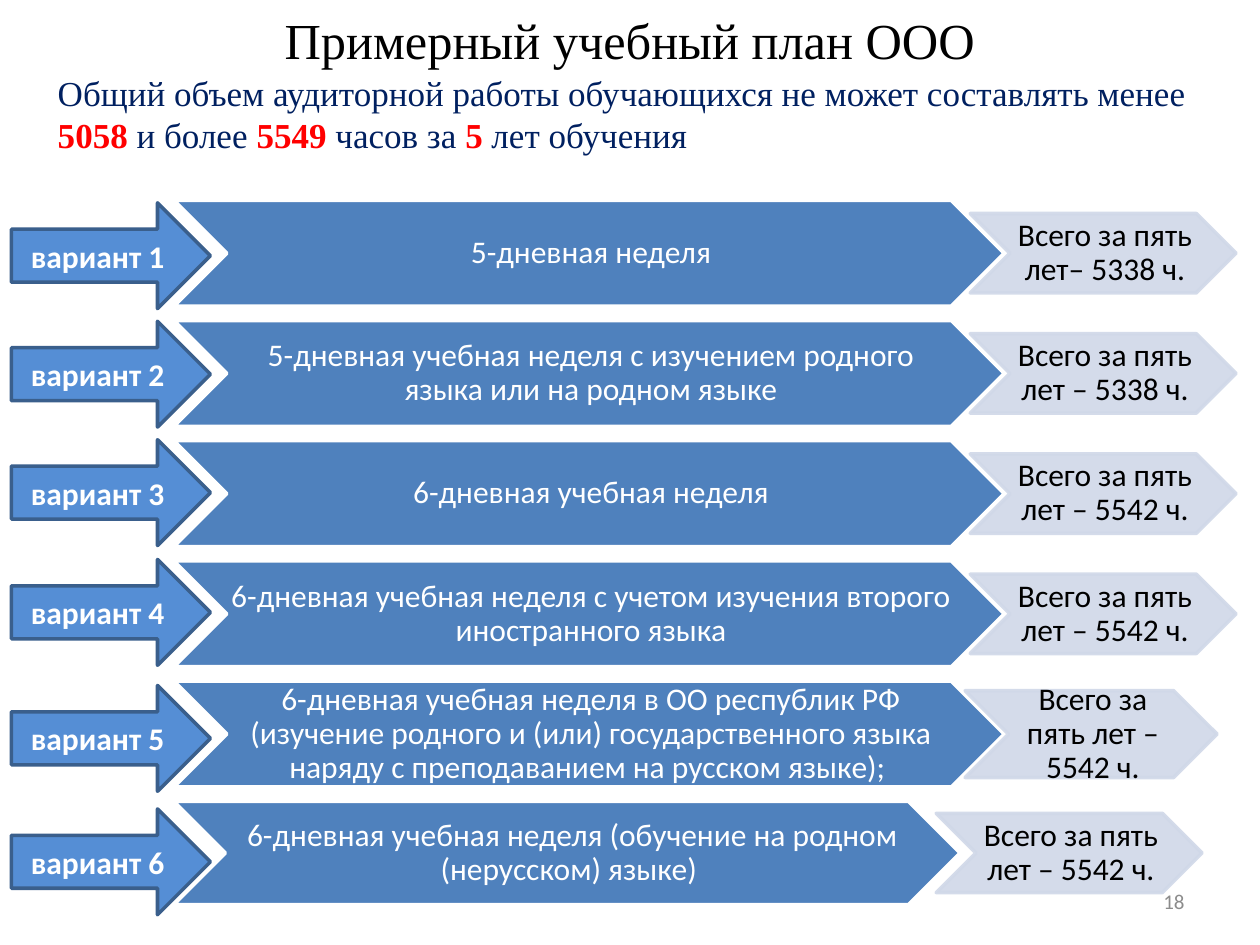
from lxml import etree
from pptx import Presentation
from pptx import util as u
from pptx.dml.color import RGBColor
from pptx.enum import shapes, text
from pptx.oxml.ns import qn

TITLE = "Примерный учебный план ООО"
SUMMARY = [
    ("Общий объем аудиторной работы обучающихся не может составлять менее ", "summary"),
    ("5058", "number"),
    (" и более ", "summary"),
    ("5549", "number"),
    (" часов за ", "summary"),
    ("5", "number"),
    (" лет обучения", "summary"),
]
PAGE_NUMBER = "18"
VARIANTS = [
    ("5-дневная неделя", "Всего за пять лет– 5338 ч."),
    ("5-дневная учебная неделя с изучением родного языка или на родном языке",
     "Всего за пять лет – 5338 ч."),
    ("6-дневная учебная неделя", "Всего за пять лет – 5542 ч."),
    ("6-дневная учебная неделя с учетом изучения второго иностранного языка",
     "Всего за пять лет – 5542 ч."),
    ("6-дневная учебная неделя в ОО республик РФ (изучение родного и (или) "
     "государственного языка наряду с преподаванием на русском языке); ",
     "Всего за пять лет – 5542 ч."),
    (" 6-дневная учебная неделя (обучение на родном (нерусском) языке)",
     "Всего за пять лет – 5542 ч."),
]

THEME = {
    "fonts": {
        "title": ({"name": "Times New Roman", "size": u.Pt(28.8)}, "000000"),
        "summary": ({"name": "Times New Roman", "size": u.Pt(20), "bold": False}, "002060"),
        "number": ({"name": "Times New Roman", "size": u.Pt(20), "bold": True}, "FF0000"),
        "label": ({"name": "Calibri", "size": u.Pt(18), "bold": True}, "FFFFFF"),
        "week": ({"name": "Calibri", "size": u.Pt(18)}, "FFFFFF"),
        "total": ({"name": "Calibri", "size": u.Pt(18)}, "000000"),
        "page": ({"name": "Calibri", "size": u.Pt(12)}, "8C8C8C"),
    },
    # fill, line, opacity in percent
    "shapes": {
        "label": ("558ED5", "3A5F8C", 100),
        "week": ("4F81BD", "FFFFFF", 100),
        "total": ("D0D8E8", "D0D8E8", 90),
    },
    "line_width": u.Pt(2),
}

# The slide is a grid of 100 columns by 75 rows
SLIDE_WIDTH, SLIDE_HEIGHT = u.Inches(10), u.Inches(7.5)
UNIT = SLIDE_WIDTH / 100
FIRST_ROW, ROW_PITCH = 15.9, 9.54
WEEK_LEFT, WEEK_SIZE = 13.8, (65.9, 8.4)
TOTAL_LEFT, TOTAL_SIZE = 77, (21.1, 6.3)
LABEL_LEFT, LABEL_SIZE = 0.9, (15.8, 8.4)
LABEL_TOPS = [16.1, 25.5, 34.9, 44.4, 54.4, 64.2]
# Rows whose chevrons differ from the common size
WEEK_SIZES = {5: (62.4, 8.2)}
TOTAL_PLACES = {4: (76.6, 20, 6.9), 5: (74.3, 21.1, 6.3)}

CENTER, LEFT, RIGHT = text.PP_ALIGN.CENTER, text.PP_ALIGN.LEFT, text.PP_ALIGN.RIGHT
MIDDLE, TOP = text.MSO_ANCHOR.MIDDLE, text.MSO_ANCHOR.TOP
CHEVRON_FRAME = {
    "margin_left": u.Inches(0.03), "margin_right": 0,
    "margin_top": u.Inches(0.01), "margin_bottom": u.Inches(0.01),
}


def apply(target, values):
    for name, value in values.items():
        setattr(target, name, value)


def grid(*lengths):
    return [u.Emu(round(length * UNIT)) for length in lengths]


def write(shape, runs, alignment=CENTER, anchor=MIDDLE, spacing=1.0, frame_format=None):
    frame = shape.text_frame
    apply(frame, {"word_wrap": True, "vertical_anchor": anchor, **(frame_format or {})})
    paragraph = frame.paragraphs[0]
    apply(paragraph, {"alignment": alignment, "line_spacing": spacing})
    for words, style in runs:
        run = paragraph.add_run()
        run.text = words
        font_format, color = THEME["fonts"][style]
        apply(run.font, font_format)
        run.font.color.rgb = RGBColor.from_string(color)


def add_text(slide, place, runs, **layout):
    write(slide.shapes.add_textbox(*grid(*place)), runs, **layout)


def add_block(slide, kind, style, place, words, **layout):
    shape = slide.shapes.add_shape(kind, *grid(*place))
    shape.shadow.inherit = False
    fill, line, opacity = THEME["shapes"][style]
    shape.fill.solid()
    shape.fill.fore_color.rgb = RGBColor.from_string(fill)
    shape.line.color.rgb = RGBColor.from_string(line)
    shape.line.width = THEME["line_width"]
    if opacity < 100:
        for color in shape.fill._xPr.iter(qn("a:srgbClr")):
            etree.SubElement(color, qn("a:alpha"), val=str(opacity * 1000))
    write(shape, [(words, style)], **layout)


def add_variant(slide, index, week, total):
    chevron = shapes.MSO_SHAPE.CHEVRON
    chevron_layout = {"spacing": 0.9, "frame_format": CHEVRON_FRAME}
    top = FIRST_ROW + index * ROW_PITCH
    width, height = WEEK_SIZES.get(index, WEEK_SIZE)
    add_block(slide, chevron, "week", (WEEK_LEFT, top, width, height), week, **chevron_layout)

    left, total_width, total_height = TOTAL_PLACES.get(index, (TOTAL_LEFT, *TOTAL_SIZE))
    total_top = top + (height - total_height) / 2
    add_block(slide, chevron, "total", (left, total_top, total_width, total_height),
              total, **chevron_layout)

    add_block(slide, shapes.MSO_SHAPE.RIGHT_ARROW, "label",
              (LABEL_LEFT, LABEL_TOPS[index], *LABEL_SIZE), f"вариант {index + 1}")


def main():
    presentation = Presentation()
    apply(presentation, {"slide_width": SLIDE_WIDTH, "slide_height": SLIDE_HEIGHT})
    slide = presentation.slides.add_slide(presentation.slide_layouts[6])
    add_text(slide, (5, 0.3, 90, 5.6), [(TITLE, "title")])
    for index, (week, total) in enumerate(VARIANTS):
        add_variant(slide, index, week, total)
    add_text(slide, (71.7, 69.5, 23.3, 4), [(PAGE_NUMBER, "page")], alignment=RIGHT)
    add_text(slide, (3.6, 5.2, 96.1, 7.7), SUMMARY, alignment=LEFT, anchor=TOP)
    presentation.save("out.pptx")


if __name__ == "__main__":
    main()
